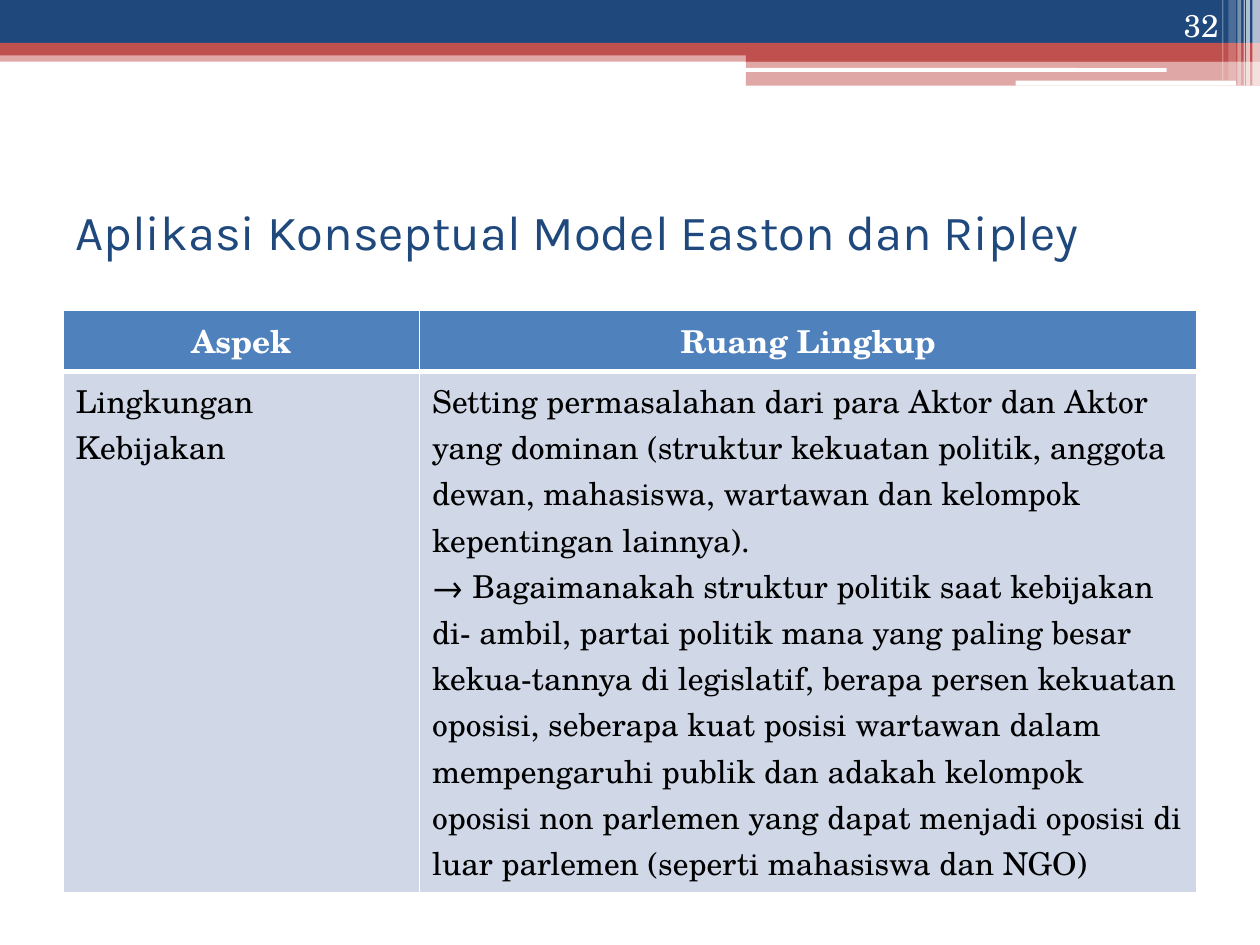
from dataclasses import dataclass

from lxml import etree
from pptx import Presentation
from pptx.dml.color import RGBColor
from pptx.enum import shapes, text
from pptx.oxml import ns
from pptx.util import Inches, Pt


@dataclass(frozen=True)
class Theme:
    navy: str = "1F497D"
    red: str = "C0504D"
    white: str = "FFFFFF"
    black: str = "000000"
    header: str = "4F81BD"
    body: str = "D0D8E8"
    title_font: str = "Karla"
    text_font: str = "TeX Gyre Schola"
    title_size: int = 28
    text_size: int = 18


theme = Theme()


def style(para, font, size, color, bold=False):
    para.font.name = font
    para.font.size = Pt(size)
    para.font.bold = bold
    para.font.color.rgb = RGBColor.from_string(color)


def add_border(cell, side, points):
    line = etree.SubElement(cell._tc.get_or_add_tcPr(), ns.qn(f"a:{side}"), w=str(Pt(points)))
    fill = etree.SubElement(line, ns.qn("a:solidFill"))
    etree.SubElement(fill, ns.qn("a:srgbClr"), val=theme.white)


deck = Presentation()
deck.slide_width, deck.slide_height = Inches(10), Inches(7.5)
page = deck.slides.add_slide(deck.slide_layouts[5])

RECT = shapes.MSO_SHAPE.RECTANGLE
ROUNDED = shapes.MSO_SHAPE.ROUNDED_RECTANGLE
bands = [
    (RECT, 0, 0.4, 10, 0.09, theme.red, 50),
    (RECT, 0, 0, 10, 0.34, theme.navy, 100),
    (RECT, 0, 0.34, 10, 0.1, theme.red, 100),
    (RECT, 5.92, 0.39, 4.08, 0.1, theme.red, 100),
    (RECT, 5.92, 0.48, 4.08, 0.2, theme.red, 50),
    (ROUNDED, 5.91, 0.54, 3.35, 0.03, theme.white, 100),
    (ROUNDED, 8.06, 0.64, 1.75, 0.04, theme.white, 100),
]
stripes = [
    (9.94, 0.06, 0.68, 65),
    (9.89, 0.03, 0.68, 65),
    (9.87, 0.01, 0.68, 60),
    (9.82, 0.03, 0.68, 40),
    (9.75, 0.06, 0.64, 20),
    (9.7, 0.01, 0.64, 30),
]
bands += [(RECT, left, 0, width, height, theme.white, opacity)
          for left, width, height, opacity in stripes]

for kind, left, top, width, height, color, opacity in bands:
    band = page.shapes.add_shape(kind, Inches(left), Inches(top), Inches(width), Inches(height))
    band.shadow.inherit = False
    band.line.fill.background()
    band.fill.solid()
    band.fill.fore_color.rgb = RGBColor.from_string(color)
    if opacity < 100:
        tint = band._element.spPr.find(ns.qn("a:solidFill"))[0]
        etree.SubElement(tint, ns.qn("a:alpha"), val=str(opacity * 1000))

title = page.shapes.title
title.left, title.top, title.width, title.height = map(Inches, (0.5, 1.25, 9, 1.17))
title.text_frame.text = "Aplikasi Konseptual Model Easton dan Ripley"
title.text_frame.vertical_anchor = text.MSO_ANCHOR.MIDDLE
para = title.text_frame.paragraphs[0]
para.alignment = text.PP_ALIGN.LEFT
style(para, theme.title_font, theme.title_size, theme.navy)

rows = [
    ["Aspek", "Ruang Lingkup"],
    [
        "Lingkungan Kebijakan",
        "Setting permasalahan dari para Aktor dan Aktor yang dominan "
        "(struktur kekuatan politik, anggota dewan, mahasiswa, wartawan dan "
        "kelompok kepentingan lainnya).\n"
        "→ Bagaimanakah struktur politik saat kebijakan di- ambil, partai "
        "politik mana yang paling besar kekua-tannya di legislatif, berapa "
        "persen kekuatan oposisi, seberapa kuat posisi wartawan dalam "
        "mempengaruhi publik dan adakah kelompok oposisi non parlemen yang "
        "dapat menjadi oposisi di luar parlemen (seperti mahasiswa dan NGO)",
    ],
]
table = page.shapes.add_table(2, 2, Inches(0.5), Inches(2.46), Inches(9), Inches(3.81)).table
for column, width in zip(table.columns, (2.83, 6.17)):
    column.width = Inches(width)
for row, height in zip(table.rows, (0.41, 3.4)):
    row.height = Inches(height)

for row_index, row in enumerate(rows):
    is_header = row_index == 0
    for column_index, words in enumerate(row):
        cell = table.cell(row_index, column_index)
        cell.text = words
        for side in ("lnL", "lnR", "lnT", "lnB"):
            thick = (is_header and side == "lnB") or (not is_header and side == "lnT")
            add_border(cell, side, 3 if thick else 1)
        cell.fill.solid()
        cell.fill.fore_color.rgb = RGBColor.from_string(theme.header if is_header else theme.body)
        for para in cell.text_frame.paragraphs:
            para.alignment = text.PP_ALIGN.CENTER if is_header else text.PP_ALIGN.LEFT
            style(para, theme.text_font, theme.text_size,
                  theme.white if is_header else theme.black, is_header)

number = page.shapes.add_textbox(Inches(8.94), Inches(0), Inches(0.83), Inches(0.4))
number.text_frame.word_wrap = True
number.text_frame.vertical_anchor = text.MSO_ANCHOR.BOTTOM
number.text_frame.text = "32"
para = number.text_frame.paragraphs[0]
para.alignment = text.PP_ALIGN.RIGHT
style(para, theme.text_font, theme.text_size, theme.white)

deck.save("out.pptx")
